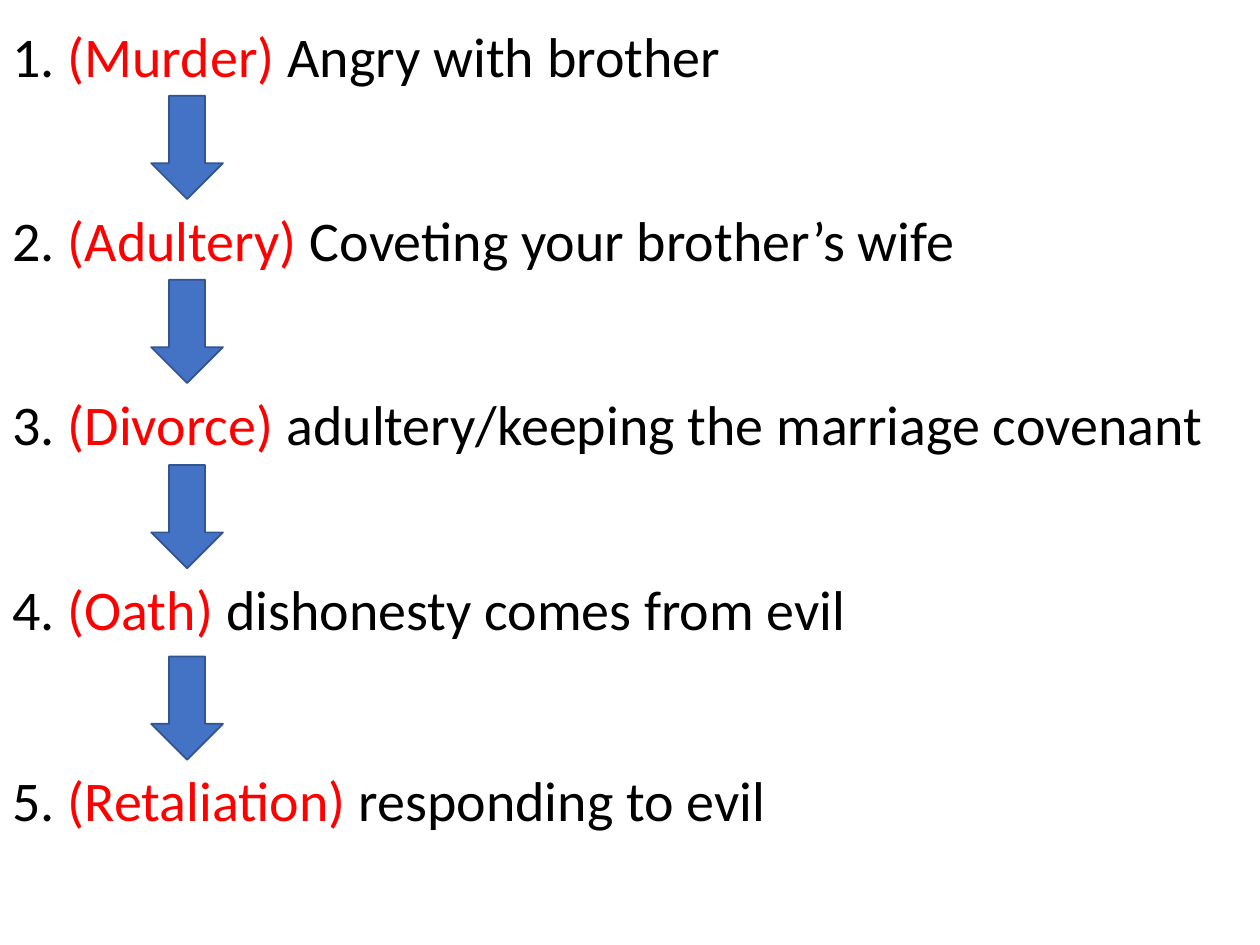
"""Build a slide that lists five teachings linked by down arrows."""
import dataclasses

import pptx
import pptx.dml.color
import pptx.enum.shapes
import pptx.enum.text
import pptx.slide
import pptx.text.text
import pptx.util

Inches = pptx.util.Inches


@dataclasses.dataclass(frozen=True)
class Theme:
    """Colours and type of the slide."""

    font: str = "Calibri"
    size: int = 32
    text: str = "000000"
    accent: str = "FF0000"
    arrow_fill: str = "4472C4"
    arrow_line: str = "325491"
    line_width: int = 1


@dataclasses.dataclass(frozen=True)
class Teaching:
    """One numbered line and its place."""

    topic: str
    meaning: str
    top: float
    width: float


THEME = Theme()
LINE_HEIGHT = 0.64
ARROW_LEFT, ARROW_WIDTH, ARROW_HEIGHT = 1.2, 0.57, 0.82
TEACHINGS = (
    Teaching("Murder", "Angry with brother", 0.12, 9.09),
    Teaching("Adultery", "Coveting your brother’s wife", 1.58, 9.09),
    Teaching("Divorce", "adultery/keeping the marriage covenant", 3.04, 9.87),
    Teaching("Oath", "dishonesty comes from evil", 4.51, 9.87),
    Teaching("Retaliation", "responding to evil", 6.03, 9.87),
)


def add_span(para: pptx.text.text._Paragraph, text: str, *, color: str = THEME.text,
             size: int = THEME.size, font: str = THEME.font) -> None:
    """Append formatted text to a paragraph."""
    span = para.add_run()
    span.text = text
    span.font.name = font
    span.font.size = pptx.util.Pt(size)
    span.font.color.rgb = pptx.dml.color.RGBColor.from_string(color)


def draw_teaching(page: pptx.slide.Slide, number: int, teaching: Teaching) -> None:
    """Draw a numbered line with its topic in the accent colour."""
    box = page.shapes.add_textbox(
        Inches(0), Inches(teaching.top), Inches(teaching.width), Inches(LINE_HEIGHT))
    box.text_frame.word_wrap = True
    box.text_frame.auto_size = pptx.enum.text.MSO_AUTO_SIZE.SHAPE_TO_FIT_TEXT
    para = box.text_frame.paragraphs[0]
    add_span(para, f"{number}. ")
    add_span(para, f"({teaching.topic}) ", color=THEME.accent)
    add_span(para, teaching.meaning)


def draw_arrow(page: pptx.slide.Slide, bottom: float) -> None:
    """Draw a down arrow whose tip touches the given height."""
    arrow = page.shapes.add_shape(
        pptx.enum.shapes.MSO_SHAPE.DOWN_ARROW, Inches(ARROW_LEFT),
        Inches(bottom - ARROW_HEIGHT), Inches(ARROW_WIDTH), Inches(ARROW_HEIGHT))
    arrow.shadow.inherit = False
    arrow.fill.solid()
    arrow.fill.fore_color.rgb = pptx.dml.color.RGBColor.from_string(THEME.arrow_fill)
    arrow.line.color.rgb = pptx.dml.color.RGBColor.from_string(THEME.arrow_line)
    arrow.line.width = pptx.util.Pt(THEME.line_width)


def main() -> None:
    """Create and save the deck."""
    deck = pptx.Presentation()
    deck.slide_width, deck.slide_height = Inches(10), Inches(7.5)
    page = deck.slides.add_slide(deck.slide_layouts[6])
    for number, teaching in enumerate(TEACHINGS, start=1):
        if number > 1:
            draw_arrow(page, teaching.top)
        draw_teaching(page, number, teaching)
    deck.save("out.pptx")


if __name__ == "__main__":
    main()
